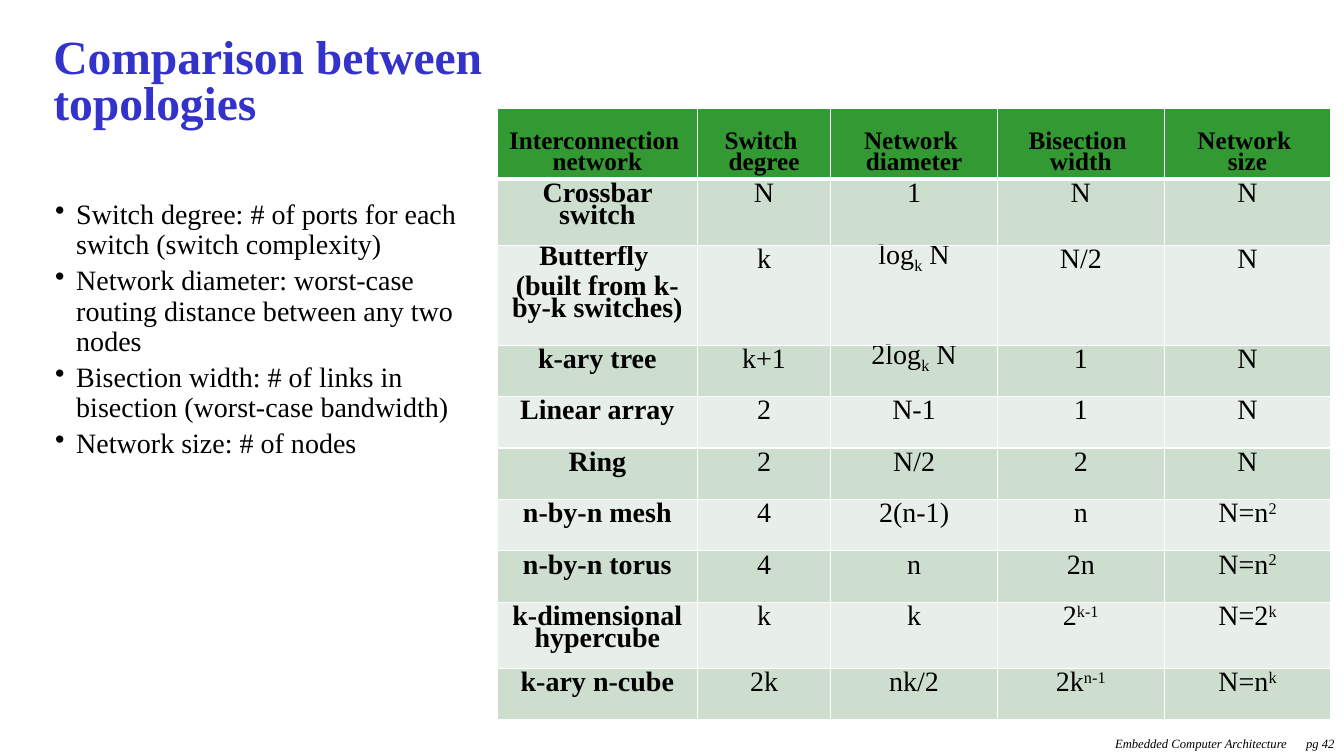
import pptx
import pptx.dml.color
import pptx.enum.text
import pptx.oxml
import pptx.oxml.ns
import pptx.util

Pt = pptx.util.Pt
ALIGN = pptx.enum.text.PP_ALIGN
ANCHOR = pptx.enum.text.MSO_ANCHOR
FONT = "Times New Roman"
COLORS = {"title": "3333CC", "text": "000000", "header": "339933",
          "odd": "CEDECE", "even": "E8EFE8", "border": "FFFFFF"}

DEFINITIONS = [
    "Switch degree: # of ports for each switch (switch complexity)",
    "Network diameter: worst-case routing distance between any two nodes",
    "Bisection width: # of links in bisection (worst-case bandwidth)",
    "Network size: # of nodes",
]

# "/n" pieces: "\n" parts paragraphs, "|" parts runs, "_" lowers and "^" raises a run
HEADER = ["Interconnection \nnetwork", "Switch \ndegree", "Network \ndiameter",
          "Bisection \nwidth", "Network \nsize"]
TOPOLOGIES = [
    ["Crossbar switch", "N", "1", "N", "N"],
    ["Butterfly \n(built from k-by-k switches)", "k", "log|_k| N", "N/2", "N"],
    ["k-ary tree", "k+1", "2log|_k| N", "1", "N"],
    ["Linear array", "2", "N-1", "1", "N"],
    ["Ring", "2", "N/2", "2", "N"],
    ["n-by-n mesh", "4", "2(n-1)", "n", "N=n|^2"],
    ["n-by-n torus", "4", "n", "2n", "N=n|^2"],
    ["k-dimensional hypercube", "k", "k", "2|^k-1", "N=2|^k"],
    ["k-ary n-cube", "2k", "nk/2", "2k|^n-1", "N=n|^k"],
]
COLUMN_WIDTHS = [143, 95.2, 119.1, 119.1, 119.1]
ROW_HEIGHTS = [50.4, 47.5, 71.3] + [36.72] * 5 + [47.5, 36.72]
BASELINES = {"_": "-25000", "^": "30000"}


def rgb(name):
    return pptx.dml.color.RGBColor.from_string(COLORS[name])


def style_runs(para, size, color="text", bold=False, italic=False):
    for span in para.runs:
        font = span.font
        font.name, font.size = FONT, Pt(size)
        font.bold, font.italic = bold, italic
        font.color.rgb = rgb(color)


def add_text(slide, box, text):
    left, top, width, height = box
    frame = slide.shapes.add_textbox(Pt(left), Pt(top), Pt(width), Pt(height)).text_frame
    frame.word_wrap = True
    frame.text = text
    return frame


def append_xml(parent, xml):
    parent.append(pptx.oxml.parse_xml(
        xml.replace(" ", f' {pptx.oxml.ns.nsdecls("a")} ', 1)))


def add_title(slide, box):
    frame = add_text(slide, box, "")
    frame.vertical_anchor = ANCHOR.MIDDLE
    para = frame.paragraphs[0]
    para.text = "Comparison between \vtopologies"
    para.line_spacing = 0.8
    style_runs(para, 34, "title", bold=True)


def add_definitions(slide, box):
    frame = add_text(slide, box, "\n".join(DEFINITIONS))
    for para in frame.paragraphs:
        para.line_spacing = 0.9
        para.space_before = Pt(4)
        style_runs(para, 20)
        props = para._p.get_or_add_pPr()
        indent = Pt(15)
        props.set("marL", str(indent))
        props.set("indent", str(-indent))
        append_xml(props, '<a:buChar char="•"/>')


def add_footer(slide, box):
    """Course name, then the page number at a tab stop."""
    frame = add_text(slide, box, "Embedded Computer Architecture\tpg 42")
    frame.margin_left, frame.margin_right = Pt(112.5), 0
    para = frame.paragraphs[0]
    style_runs(para, 9, italic=True)
    append_xml(para._p.get_or_add_pPr(),
               f'<a:tabLst ><a:tab pos="{Pt(136.5)}" algn="l"/></a:tabLst>')


def set_borders(cell, top, bottom):
    props = cell._tc.get_or_add_tcPr()
    for side, width in {"L": 1, "R": 1, "T": top, "B": bottom}.items():
        append_xml(props, f'<a:ln{side} w="{Pt(width)}"><a:solidFill><a:srgbClr '
                          f'val="{COLORS["border"]}"/></a:solidFill></a:ln{side}>')


def fill_cell(cell, text, row, column):
    is_header = row == 0
    set_borders(cell, 3 if row == 1 else 1, 3 if is_header else 1)
    cell.fill.solid()
    cell.fill.fore_color.rgb = rgb("header" if is_header else "odd" if row % 2 else "even")
    cell.vertical_anchor = ANCHOR.BOTTOM if is_header else ANCHOR.TOP
    cell.margin_left = cell.margin_right = Pt(7.2)
    cell.margin_top = Pt(9.4 if is_header else 5)
    cell.margin_bottom = Pt(2.2)
    cell.text = text.replace("|", "")
    for para, line in zip(cell.text_frame.paragraphs, text.split("\n")):
        para.alignment = ALIGN.CENTER
        para.line_spacing = Pt(15 if is_header else 14 if line == "Butterfly " else 16)
        para.space_after = Pt(0 if is_header else 5)
        para.text = ""
        for piece in line.split("|"):
            span = para.add_run()
            span.text = piece.lstrip("_^")
            if piece[0] in BASELINES:
                span.font._element.set("baseline", BASELINES[piece[0]])
        style_runs(para, 18 if is_header else 20, bold=is_header or column == 0)


def add_topology_table(slide, left, top):
    rows = [HEADER] + TOPOLOGIES
    table = slide.shapes.add_table(
        len(rows), len(HEADER), Pt(left), Pt(top),
        Pt(sum(COLUMN_WIDTHS)), Pt(sum(ROW_HEIGHTS))).table
    table.horz_banding = False
    for column, width in zip(table.columns, COLUMN_WIDTHS):
        column.width = Pt(width)
    for row, height in zip(table.rows, ROW_HEIGHTS):
        row.height = Pt(height)
    for r, texts in enumerate(rows):
        for c, text in enumerate(texts):
            fill_cell(table.cell(r, c), text, r, c)


def main():
    deck = pptx.Presentation()
    deck.slide_width, deck.slide_height = Pt(960), Pt(540)
    slide = deck.slides.add_slide(deck.slide_layouts[6])
    add_footer(slide, (684, 522, 276, 18))
    add_title(slide, (31, 18, 785.5, 84))
    add_definitions(slide, (32.4, 139.7, 321, 85))
    add_topology_table(slide, 355.2, 77.4)
    deck.save("out.pptx")


if __name__ == "__main__":
    main()
